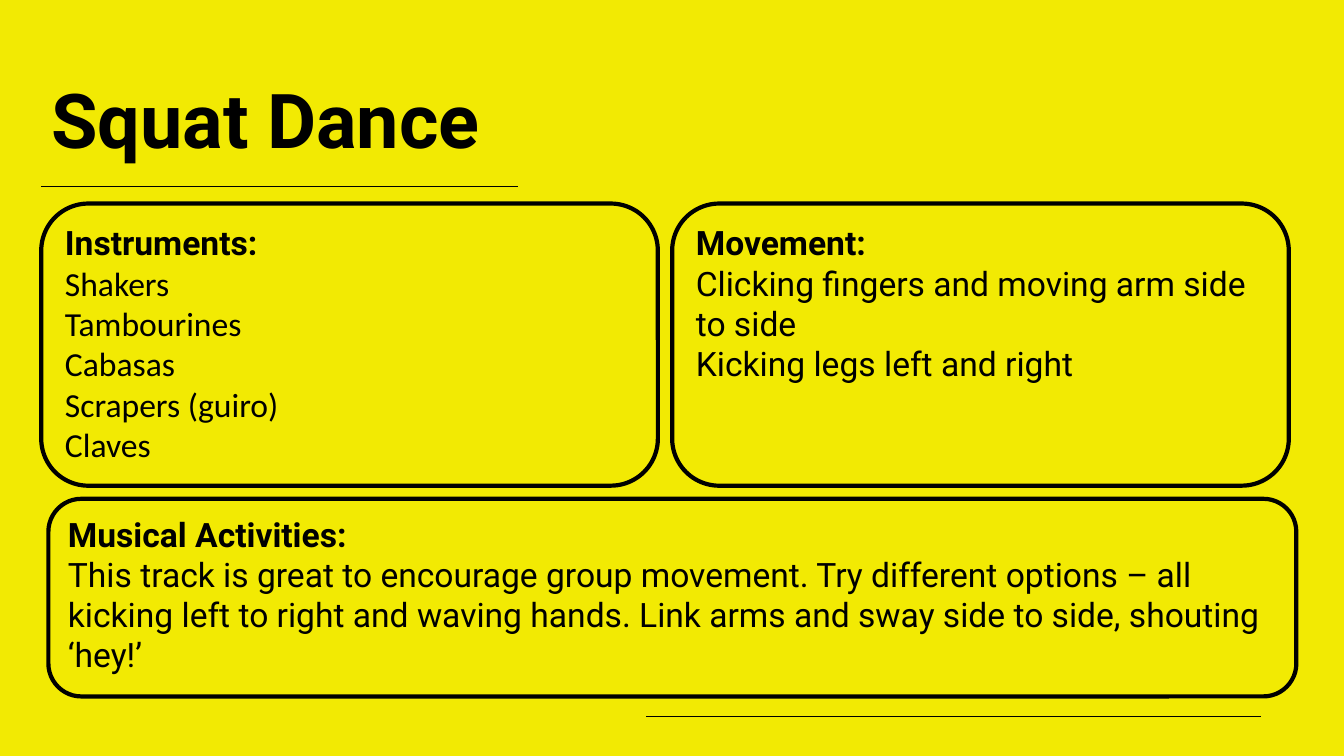
"""Build the Squat Dance activity slide."""
from lxml import etree
from pptx import Presentation
from pptx.dml.color import RGBColor
from pptx.enum.shapes import MSO_CONNECTOR, MSO_SHAPE
from pptx.enum.text import MSO_ANCHOR, PP_ALIGN
from pptx.oxml.ns import qn
from pptx.util import Cm, Pt

ROUNDED = MSO_SHAPE.ROUNDED_RECTANGLE
STRAIGHT = MSO_CONNECTOR.STRAIGHT
TOP = MSO_ANCHOR.TOP
LEFT = PP_ALIGN.LEFT
YELLOW = RGBColor(0xF2, 0xEA, 0x03)
BLACK = RGBColor(0, 0, 0)

TITLE = "Squat Dance"
INSTRUMENTS = ["Shakers", "Tambourines", "Cabasas", "Scrapers (guiro)", "Claves"]
MOVEMENT = ["Clicking fingers and moving arm side to side", "Kicking legs left and right"]
ACTIVITIES = [
    "This track is great to encourage group movement. Try different options – all "
    "kicking left to right and waving hands. Link arms and sway side to side, "
    "shouting ‘hey!’"
]

MARGIN, CARD_TOP, CARD_W, CARD_H, GAP = 1.04, 5.13, 15.54, 7.11, 0.36
CARDS = [
    ("Musical Activities:", ACTIVITIES, "Roboto", (1.22, 12.57, 31.45, 4.98)),
    ("Instruments:", INSTRUMENTS, "Calibri", (MARGIN, CARD_TOP, CARD_W, CARD_H)),
    ("Movement:", MOVEMENT, "Roboto", (MARGIN + CARD_W + GAP, CARD_TOP, CARD_W, CARD_H)),
]
RULES = [(16.28, 31.78, 18.06), (MARGIN, 13.06, 4.7)]


def write(p, text, size=24, font="Roboto", bold=False, spacing=None):
    """Put one formatted run in a paragraph."""
    p.alignment = LEFT
    p.line_spacing = spacing
    r = p.add_run()
    r.text = text
    r.font.name, r.font.size, r.font.bold = font, Pt(size), bold
    r.font.color.rgb = BLACK


prs = Presentation()
prs.slide_width, prs.slide_height = Cm(33.87), Cm(19.05)
s = prs.slides.add_slide(prs.slide_layouts[6])
s.background.fill.solid()
s.background.fill.fore_color.rgb = YELLOW

for x1, x2, y in RULES:
    rule = s.shapes.add_connector(STRAIGHT, Cm(x1), Cm(y), Cm(x2), Cm(y))
    rule.line.color.rgb = BLACK
    rule.line.width = Pt(1)
    etree.SubElement(rule._element.spPr, qn("a:effectLst"))

tf = s.shapes.add_textbox(Cm(MARGIN), Cm(1.96), Cm(18.87), Cm(3.2)).text_frame
tf.word_wrap = True
tf.vertical_anchor = TOP
write(tf.paragraphs[0], TITLE, size=54, bold=True, spacing=0.9)

for heading, lines, font, box in CARDS:
    sp = s.shapes.add_shape(ROUNDED, *map(Cm, box))
    sp.shadow.inherit = False
    sp.fill.background()
    sp.line.color.rgb = BLACK
    sp.line.width = Pt(3)
    tf = sp.text_frame
    tf.word_wrap = True
    tf.vertical_anchor = TOP
    write(tf.paragraphs[0], heading, bold=True)
    for line in lines:
        write(tf.add_paragraph(), line, font=font)

prs.save("out.pptx")
